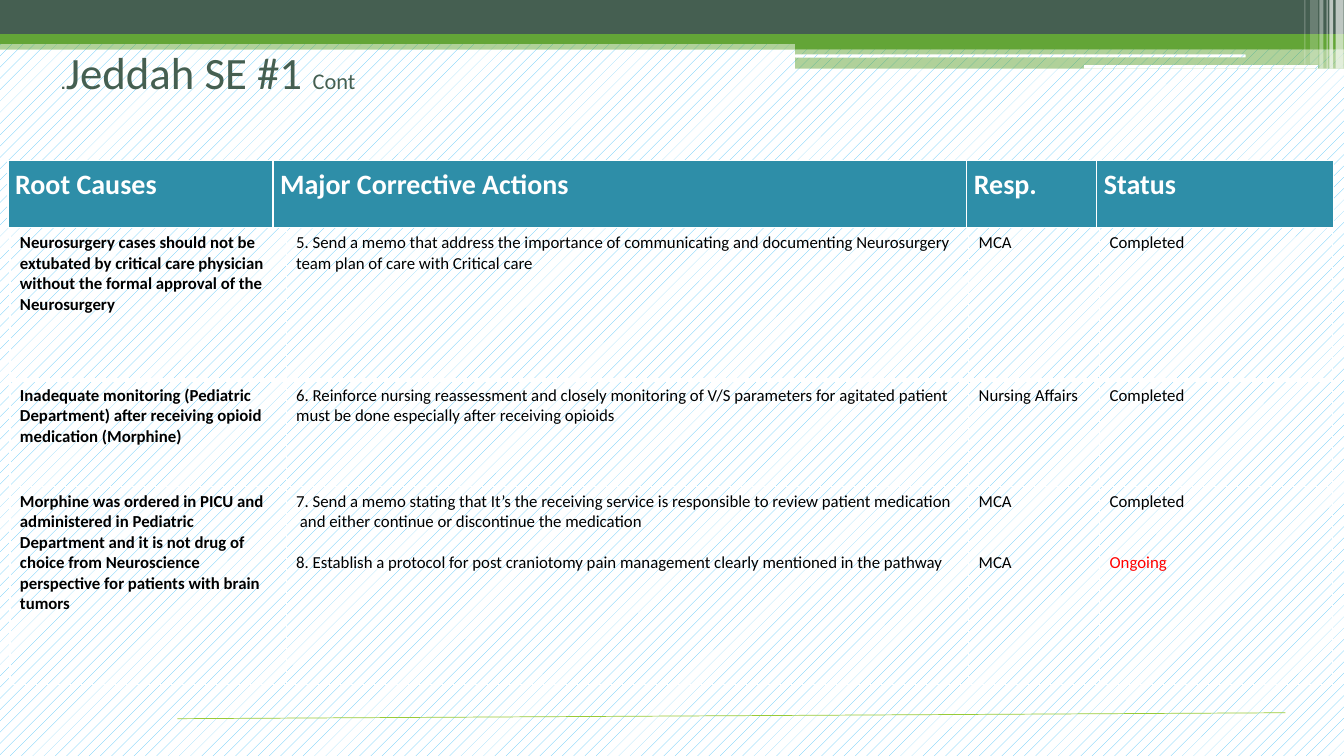
"""Build the root cause and corrective action slide."""
import pptx
import pptx.dml.color
import pptx.enum.dml
import pptx.enum.shapes
import pptx.enum.text
import pptx.oxml
import pptx.oxml.ns
import pptx.util
from dataclasses import dataclass

Cm, Pt = pptx.util.Cm, pptx.util.Pt
SHAPES = pptx.enum.shapes.MSO_SHAPE
NS = pptx.oxml.ns.nsdecls("a")


@dataclass(frozen=True)
class Theme:
    font: str = "Calibri"
    dark: str = "455F51"
    green: str = "63A537"
    lime: str = "99CB38"
    sky: str = "51C3F9"
    teal: str = "2E8EA8"
    white: str = "FFFFFF"
    black: str = "000000"
    red: str = "FF0000"
    title: int = 32
    subtitle: int = 16
    heading: int = 20
    body: int = 12


def rgb(code):
    return pptx.dml.color.RGBColor.from_string(code)


def assign(target, values):
    for name, value in values.items():
        setattr(target, name, value)


class SlideBuilder:
    def __init__(self, slide, theme):
        self.slide, self.theme = slide, theme

    def pattern(self, fill):
        fill.patterned()
        fill.pattern = pptx.enum.dml.MSO_PATTERN.PERCENT_10
        fill.fore_color.rgb = rgb(self.theme.sky)
        fill.back_color.rgb = rgb(self.theme.white)

    def bar(self, left, top, width, height, color=None, opacity=100):
        kind = SHAPES.RECTANGLE if color else SHAPES.ROUNDED_RECTANGLE
        bar = self.slide.shapes.add_shape(kind, Cm(left), Cm(top), Cm(width), Cm(height))
        bar.shadow.inherit = False
        bar.line.fill.background()
        if not color:
            self.pattern(bar.fill)
            return
        bar.fill.solid()
        bar.fill.fore_color.rgb = rgb(color)
        if opacity < 100:
            paint = bar.fill._xPr.find(".//" + pptx.oxml.ns.qn("a:srgbClr"))
            paint.append(pptx.oxml.parse_xml(f'<a:alpha {NS} val="{opacity * 1000}"/>'))

    def rule(self, left, top, right, bottom):
        rule = self.slide.shapes.add_connector(
            pptx.enum.shapes.MSO_CONNECTOR.STRAIGHT, Cm(left), Cm(top), Cm(right), Cm(bottom))
        rule.line.color.rgb = rgb(self.theme.lime)
        rule.line.width = Pt(0.5)
        rule._element.spPr.append(pptx.oxml.parse_xml(f"<a:effectLst {NS}/>"))

    def run(self, paragraph, text, size, color, bold=False):
        run = paragraph.add_run()
        run.text = text
        assign(run.font, {"name": self.theme.font, "size": Pt(size), "bold": bold})
        run.font.color.rgb = rgb(color)

    def title(self, left, top, width, height, parts):
        title = self.slide.shapes.title
        assign(title, {"left": Cm(left), "top": Cm(top), "width": Cm(width), "height": Cm(height)})
        assign(title.text_frame, {
            "margin_left": Cm(0.38), "word_wrap": True,
            "auto_size": pptx.enum.text.MSO_AUTO_SIZE.NONE,
            "vertical_anchor": pptx.enum.text.MSO_ANCHOR.TOP})
        heading = title.text_frame.paragraphs[0]
        heading.alignment = pptx.enum.text.PP_ALIGN.LEFT
        heading._p.get_or_add_pPr().set("rtl", "1")
        for text, size in parts:
            self.run(heading, text, size, self.theme.dark)

    def borders(self, cell, bottom):
        properties = cell._tc.get_or_add_tcPr()
        for place, (side, points) in enumerate(zip("LRTB", (1, 1, 1, bottom))):
            properties.insert(place, pptx.oxml.parse_xml(
                f'<a:ln{side} {NS} w="{Pt(points)}"><a:solidFill>'
                f'<a:srgbClr val="{self.theme.white}"/></a:solidFill></a:ln{side}>'))

    def table(self, left, top, columns, heights, rows, style):
        frame = self.slide.shapes.add_table(
            len(rows), len(columns), Cm(left), Cm(top), Cm(sum(columns)), Cm(sum(heights)))
        table = frame.table
        assign(table, {"first_row": False, "horz_banding": False})
        for column, width in zip(table.columns, columns):
            column.width = Cm(width)
        for row_number, (row, height, entries) in enumerate(zip(table.rows, heights, rows)):
            row.height = Cm(height)
            for column_number, (cell, lines) in enumerate(zip(row.cells, entries)):
                assign(cell, style["margins"])
                if style["fill"]:
                    cell.fill.solid()
                    cell.fill.fore_color.rgb = rgb(style["fill"])
                else:
                    cell.fill.background()
                self.borders(cell, style["first_rule"] if row_number == 0 else 1)
                bold = column_number in style["bold_columns"]
                for number, (text, gap, color) in enumerate(lines):
                    frame_text = cell.text_frame
                    paragraph = frame_text.add_paragraph() if number else frame_text.paragraphs[0]
                    if gap:
                        paragraph.space_before = Pt(gap)
                    self.run(paragraph, text, style["size"], color or style["color"], bold)


def line(text, gap=0, color=None):
    return text, gap, color


def main():
    theme = Theme()
    deck = pptx.Presentation()
    assign(deck, {"slide_width": Cm(33.87), "slide_height": Cm(19.05)})
    builder = SlideBuilder(deck.slides.add_slide(deck.slide_layouts[5]), theme)
    builder.pattern(builder.slide.background.fill)

    for band in (
        (0, 1.02, 33.87, 0.23, theme.green, 50),
        (0, 0, 33.87, 0.86, theme.dark),
        (0, 0.86, 33.87, 0.25, theme.green),
        (20.04, 0.99, 13.83, 0.25, theme.green),
        (20.04, 1.22, 13.83, 0.51, theme.green, 50),
        (20.04, 1.37, 11.35, 0.08),
        (27.31, 1.63, 5.92, 0.1),
    ):
        builder.bar(*band)
    for left, width, height, opacity in (
        (33.66, 0.2, 1.73, 65), (33.5, 0.1, 1.73, 65), (33.43, 0.03, 1.73, 60),
        (33.25, 0.1, 1.73, 40), (33.02, 0.2, 1.63, 20), (32.87, 0.03, 1.63, 30),
    ):
        builder.bar(left, 0, width, height, theme.white, opacity)
    builder.rule(4.47, 18.11, 32.39, 17.96)
    builder.title(1.14, 0.99, 28.88, 3.2,
                  [("Jeddah SE #1 ", theme.title), ("Cont.", theme.subtitle)])

    blank = 14.65
    actions = [
        [[line("Neurosurgery cases should not be extubated by critical care physician "
               "without the formal approval of the Neurosurgery")],
         [line("5. Send a memo that address the importance of communicating and "
               "documenting Neurosurgery"),
          line("team plan of care with Critical care")],
         [line("MCA")], [line("Completed")]],
        [[line("Inadequate monitoring (Pediatric Department) after receiving opioid "
               "medication (Morphine)")],
         [line("6. Reinforce nursing reassessment and closely monitoring of V/S "
               "parameters for agitated patient"),
          line("must be done especially after receiving opioids")],
         [line("Nursing Affairs")], [line("Completed")]],
        [[line("Morphine was ordered in PICU and administered in Pediatric Department "
               "and it is not drug of choice from Neuroscience perspective for patients "
               "with brain tumors")],
         [line("7. Send a memo stating that It’s the receiving service is responsible "
               "to review patient medication"),
          line(" and either continue or discontinue the medication"),
          line("8. Establish a protocol for post craniotomy pain management clearly "
               "mentioned in the pathway", blank)],
         [line("MCA"), line("MCA", 2 * blank)],
         [line("Completed"), line("Ongoing", 2 * blank, theme.red)]],
    ]
    builder.table(0.25, 5.74, (6.96, 17.2, 3.3, 5.87), (3.84, 2.67, 5), actions, {
        "margins": {}, "fill": None, "first_rule": 3, "bold_columns": {0},
        "size": theme.body, "color": theme.black})

    headings = ("Root Causes", "Major Corrective Actions", "Resp.", "Status")
    builder.table(0.2, 4.04, (6.68, 17.48, 3.28, 5.97), (1.7,),
                  [[[line(heading)] for heading in headings]], {
        "margins": {"margin_left": Cm(0.18), "margin_right": Cm(0.18),
                    "margin_top": Cm(0.18), "margin_bottom": Cm(0)},
        "fill": theme.teal, "first_rule": 1, "bold_columns": {0, 1, 2, 3},
        "size": theme.heading, "color": theme.white})

    deck.save("out.pptx")


if __name__ == "__main__":
    main()
